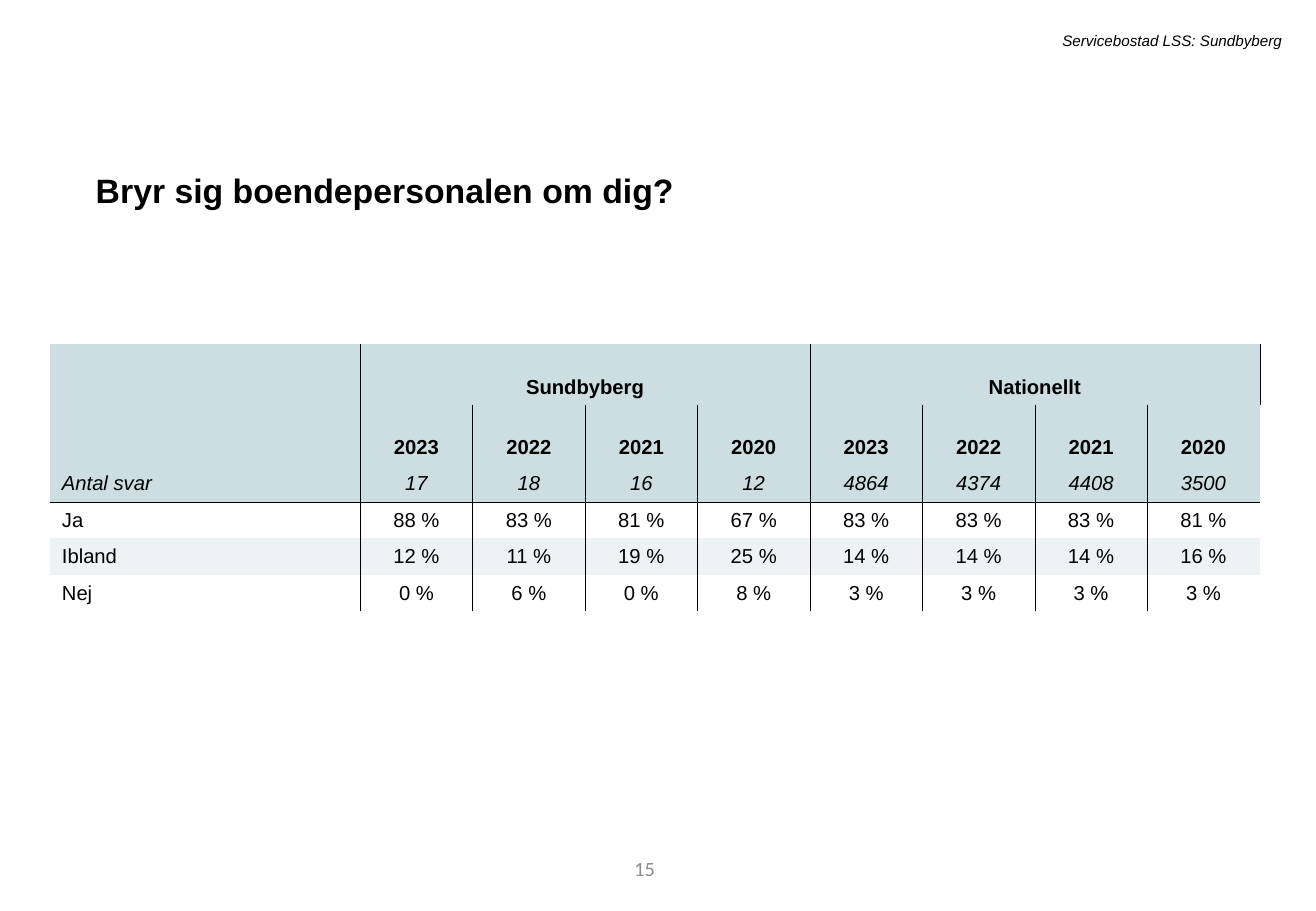
from dataclasses import dataclass

from lxml import etree
from pptx import Presentation
from pptx.dml.color import RGBColor
from pptx.enum.text import MSO_ANCHOR, MSO_AUTO_SIZE, PP_ALIGN
from pptx.oxml.ns import qn
from pptx.util import Pt

LEFT, CENTER, RIGHT = PP_ALIGN.LEFT, PP_ALIGN.CENTER, PP_ALIGN.RIGHT
TOP, MIDDLE, BOTTOM = MSO_ANCHOR.TOP, MSO_ANCHOR.MIDDLE, MSO_ANCHOR.BOTTOM
NO_FIT, GROW = MSO_AUTO_SIZE.NONE, MSO_AUTO_SIZE.SHAPE_TO_FIT_TEXT
PLAIN_STYLE = "{2D5ABB26-0587-4C30-8999-92F81FD0307C}"


@dataclass(frozen=True)
class Theme:
    font: str = "Arial"
    number_font: str = "Calibri"
    ink: str = "000000"
    muted: str = "8C8C8C"
    head_fill: str = "CCDEE1"
    band_fill: str = "EDF3F4"
    title_size: float = 20
    body_size: float = 12
    header_size: float = 9
    rule: float = 0.25


THEME = Theme()
YEARS = ["2023", "2022", "2021", "2020"]
GROUPS = ["Sundbyberg", "Nationellt"]
COUNTS = ["17", "18", "16", "12", "4864", "4374", "4408", "3500"]
ANSWERS = {
    "Ja": [88, 83, 81, 67, 83, 83, 83, 81],
    "Ibland": [12, 11, 19, 25, 14, 14, 14, 16],
    "Nej": [0, 6, 0, 8, 3, 3, 3, 3],
}
HEAD_ROWS = 3
LABEL_WIDTH = 184
ROW_HEIGHTS = [36, 36] + [21.6] * 4


def write(p, text, align=LEFT, color=THEME.ink, **font):
    p.alignment = align
    r = p.add_run()
    r.text = text
    values = {"name": THEME.font, "size": Pt(THEME.body_size), **font}
    for name, value in values.items():
        setattr(r.font, name, value)
    r.font.color.rgb = RGBColor.from_string(color)


def add_text(s, box, text, frame=None, spacing=None, **style):
    tf = s.shapes.add_textbox(*map(Pt, box)).text_frame
    for name, value in {"word_wrap": True, **(frame or {})}.items():
        setattr(tf, name, value)
    p = tf.paragraphs[0]
    for name, value in (spacing or {}).items():
        setattr(p, name, value)
    write(p, text, **style)


def add_header(s, box):
    add_text(s, box, "Servicebostad LSS: Sundbyberg", {"auto_size": GROW},
             align=RIGHT, size=Pt(THEME.header_size), italic=True)


def add_title(s, box):
    add_text(s, box, "Bryr sig boendepersonalen om dig?", {"auto_size": GROW},
             {"line_spacing": 1.2, "space_before": Pt(10)},
             size=Pt(THEME.title_size), bold=True)


def add_page_number(s, box):
    add_text(s, box, "15", {"auto_size": NO_FIT, "vertical_anchor": MIDDLE},
             align=RIGHT, color=THEME.muted, name=THEME.number_font)


def set_borders(cell, sides):
    """Rule the given sides (letters out of LRTB) and clear the others."""
    tc_pr = cell._tc.get_or_add_tcPr()
    for side in "LRTB":
        ln = etree.SubElement(tc_pr, qn(f"a:ln{side}"))
        if side in sides:
            ln.set("w", str(Pt(THEME.rule)))
            fill = etree.SubElement(ln, qn("a:solidFill"))
            etree.SubElement(fill, qn("a:srgbClr")).set("val", THEME.ink)
        else:
            etree.SubElement(ln, qn("a:noFill"))


def cell_sides(row, col, last_col):
    sides = "L" if col else ""
    if col < last_col or row == 0:
        sides += "R"
    if row == HEAD_ROWS:
        sides += "T"
    if row == HEAD_ROWS - 1:
        sides += "B"
    return sides


def paint(cell, row):
    if row < HEAD_ROWS or (row - HEAD_ROWS) % 2:
        color = THEME.head_fill if row < HEAD_ROWS else THEME.band_fill
        cell.fill.solid()
        cell.fill.fore_color.rgb = RGBColor.from_string(color)
    else:
        cell.fill.background()


def add_answer_table(s, box):
    span = len(YEARS)
    group_row = [""]
    for group in GROUPS:
        group_row += [group] + [""] * (span - 1)
    rows = [group_row, [""] + YEARS * len(GROUPS), ["Antal svar"] + COUNTS]
    rows += [[label] + [f"{v} %" for v in values] for label, values in ANSWERS.items()]
    last_col = len(COUNTS)

    table = s.shapes.add_table(len(rows), last_col + 1, *map(Pt, box)).table
    table.first_row = table.horz_banding = False
    table._tbl.tblPr.find(qn("a:tableStyleId")).text = PLAIN_STYLE
    for i, column in enumerate(table.columns):
        column.width = Pt((box[2] - LABEL_WIDTH) / last_col if i else LABEL_WIDTH)
    for row, height in zip(table.rows, ROW_HEIGHTS):
        row.height = Pt(height)

    for i, texts in enumerate(rows):
        for j, text in enumerate(texts):
            cell = table.cell(i, j)
            cell.vertical_anchor = BOTTOM if i < 2 else MIDDLE
            set_borders(cell, cell_sides(i, j, last_col))
            paint(cell, i)
            if text:
                write(cell.text_frame.paragraphs[0], text, CENTER if j else LEFT,
                      bold=i < 2, italic=i == 2)
    for j in range(1, last_col, span):
        table.cell(0, j).merge(table.cell(0, j + span - 1))


def main():
    prs = Presentation()
    prs.slide_width, prs.slide_height = Pt(780), Pt(540)
    s = prs.slides.add_slide(prs.slide_layouts[6])
    add_page_number(s, (219.6, 500.4, 175.7, 28.8))
    add_title(s, (49.7, 92.2, 676.8, 33.8))
    add_answer_table(s, (29.5, 203.8, 717.2, sum(ROW_HEIGHTS)))
    add_header(s, (128.9, 15.1, 637.9, 18))
    prs.save("out.pptx")


if __name__ == "__main__":
    main()
